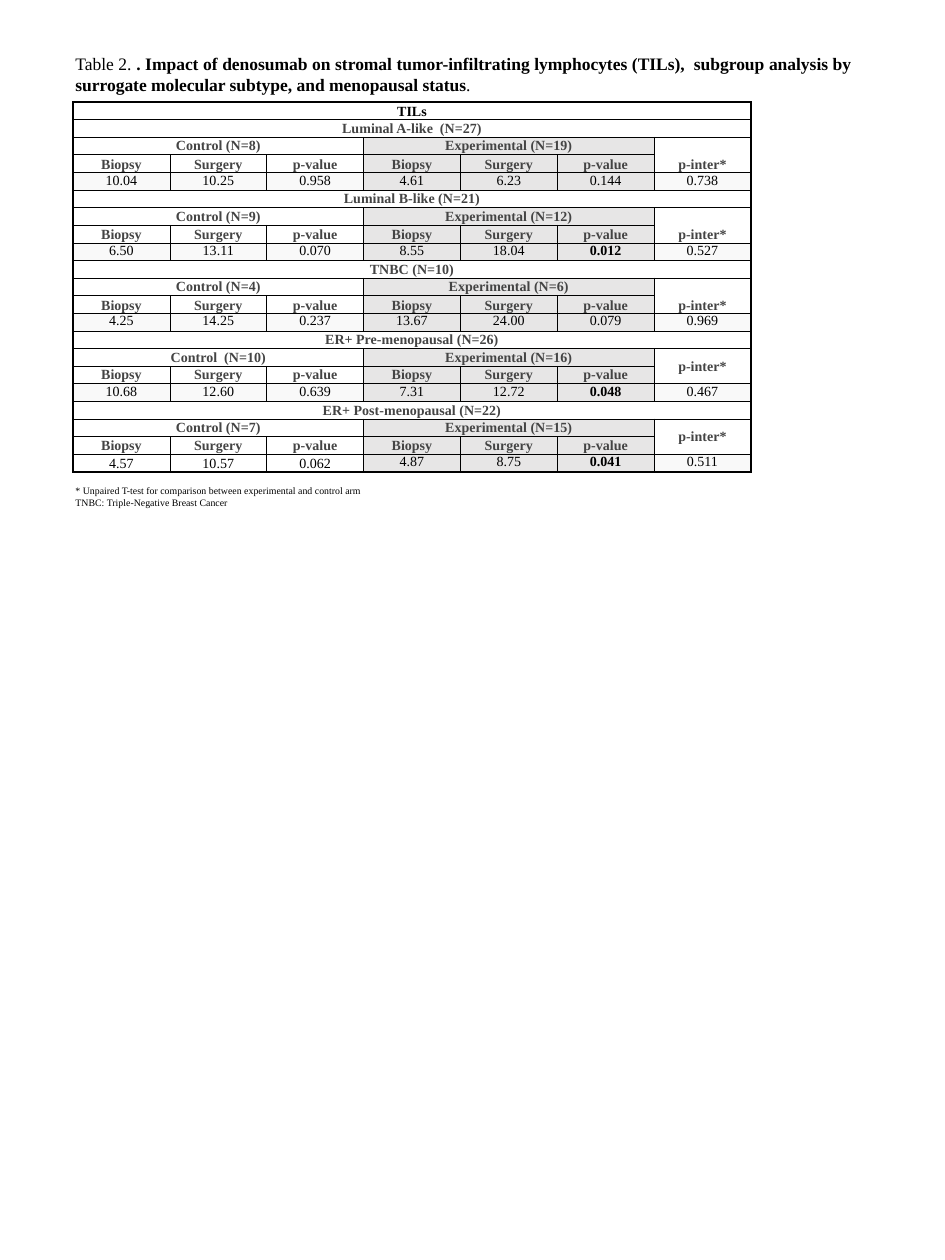
"""Build a slide with a table of TILs by molecular subtype and menopausal status."""
from lxml.etree import SubElement
from pptx import Presentation
from pptx.dml.color import RGBColor as RGB
from pptx.enum.text import MSO_ANCHOR as ANC, MSO_AUTO_SIZE as FIT, PP_ALIGN as AL
from pptx.oxml.ns import qn
from pptx.util import Inches, Pt

FONT = "Times New Roman"
BLACK, GREY = "000000", "444444"
WHITE, SHADE, PALE = "FFFFFF", "E7E6E6", "F9F9F9"
COLS, ROW_H = 7, 0.14
HEADS = ["Biopsy", "Surgery", "p-value"] * 2
BOLD_VALUES = {"0.012", "0.048", "0.041"}
GROUPS = [
    ("Luminal A-like  (N=27)", "Control (N=8)", "Experimental (N=19)",
     "10.04 10.25 0.958 4.61 6.23 0.144 0.738"),
    ("Luminal B-like (N=21)", "Control (N=9)", "Experimental (N=12)",
     "6.50 13.11 0.070 8.55 18.04 0.012 0.527"),
    ("TNBC (N=10)", "Control (N=4)", "Experimental (N=6)",
     "4.25 14.25 0.237 13.67 24.00 0.079 0.969"),
    ("ER+ Pre-menopausal (N=26)", "Control  (N=10)", "Experimental (N=16)",
     "10.68 12.60 0.639 7.31 12.72 0.048 0.467"),
    ("ER+ Post-menopausal (N=22)", "Control (N=7)", "Experimental (N=15)",
     "4.57 10.57 0.062 4.87 8.75 0.041 0.511"),
]
ROWS = 1 + 4 * len(GROUPS)


def add_run(p, text, size, color=BLACK, bold=False):
    r = p.add_run()
    r.text = text
    for name, value in {"name": FONT, "size": Pt(size), "bold": bold}.items():
        setattr(r.font, name, value)
    r.font.color.rgb = RGB.from_string(color)


def put_cell(row, col, text, fill, anchor, color=GREY, bold=True, span=(1, 1)):
    cell = tbl.cell(row, col)
    end_row, end_col = row + span[0], col + span[1]
    if span != (1, 1):
        cell.merge(tbl.cell(end_row - 1, end_col - 1))
    margins = dict.fromkeys(("margin_left", "margin_right", "margin_top", "margin_bottom"), 0)
    for name, value in {**margins, "vertical_anchor": anchor}.items():
        setattr(cell, name, value)
    p = cell.text_frame.paragraphs[0]
    p.alignment = AL.CENTER
    add_run(p, text, 8, color, bold)
    outer = {"a:lnL": col == 0, "a:lnR": end_col == COLS, "a:lnT": row == 0, "a:lnB": end_row == ROWS}
    tc_pr = cell._tc.get_or_add_tcPr()
    for tag, is_outer in outer.items():
        ln = SubElement(tc_pr, qn(tag), w=str(Pt(1 if is_outer else 0.5)))
        SubElement(SubElement(ln, qn("a:solidFill")), qn("a:srgbClr"), val=BLACK)
    if fill:
        cell.fill.solid()
        cell.fill.fore_color.rgb = RGB.from_string(fill)
    else:
        cell.fill.background()


prs = Presentation()
prs.slide_width, prs.slide_height = Inches(7.5), Inches(10)
s = prs.slides.add_slide(prs.slide_layouts[6])

tbl = s.shapes.add_table(ROWS, COLS, Inches(0.58), Inches(0.81), Inches(5.38), Inches(ROW_H * ROWS)).table
for name in ("first_row", "horz_banding"):
    setattr(tbl, name, False)
for row in tbl.rows:
    row.height = Inches(ROW_H)

put_cell(0, 0, "TILs", None, ANC.BOTTOM, BLACK, span=(1, COLS))
for i, (title, control, experimental, values) in enumerate(GROUPS):
    top = 1 + 4 * i
    menopausal = title.startswith("ER+")
    last = i == len(GROUPS) - 1
    plain = WHITE if menopausal else None
    anchor = ANC.MIDDLE if menopausal else ANC.BOTTOM
    put_cell(top, 0, title, plain, ANC.MIDDLE, span=(1, COLS))
    put_cell(top + 1, 0, control, WHITE, ANC.MIDDLE, span=(1, 3))
    put_cell(top + 1, 3, experimental, SHADE, ANC.MIDDLE, span=(1, 3))
    put_cell(top + 1, 6, "p-inter*", plain, anchor, span=(2, 1))
    for col, head in enumerate(HEADS):
        put_cell(top + 2, col, head, WHITE if col < 3 else SHADE, anchor)
    for col, value in enumerate(values.split()):
        open_cell = last and col < 3
        fill = SHADE if 3 <= col < 6 else None if open_cell else PALE
        put_cell(top + 3, col, value, fill, ANC.BOTTOM if open_cell else ANC.TOP,
                 BLACK, value in BOLD_VALUES)

TEXTS = [
    ((0.5, 3.8, 2.91, 0.39), 5.6, [
        [("* Unpaired T-test for comparison between experimental and control arm", False)],
        [("TNBC: Triple-Negative Breast Cancer", False)],
    ]),
    ((0.5, 0.37, 6.35, 0.44), 10, [
        [("Table 2. ", False),
         (". Impact of denosumab on stromal tumor-infiltrating lymphocytes (TILs),  subgroup analysis "
          "by surrogate molecular subtype, and menopausal status", True),
         (".", False)],
    ]),
]
for box, size, paragraphs in TEXTS:
    tf = s.shapes.add_textbox(*map(Inches, box)).text_frame
    for name, value in {"word_wrap": True, "auto_size": FIT.SHAPE_TO_FIT_TEXT}.items():
        setattr(tf, name, value)
    for i, runs in enumerate(paragraphs):
        p = tf.add_paragraph() if i else tf.paragraphs[0]
        p.alignment = AL.JUSTIFY
        for text, bold in runs:
            add_run(p, text, size, bold=bold)

prs.save("out.pptx")
